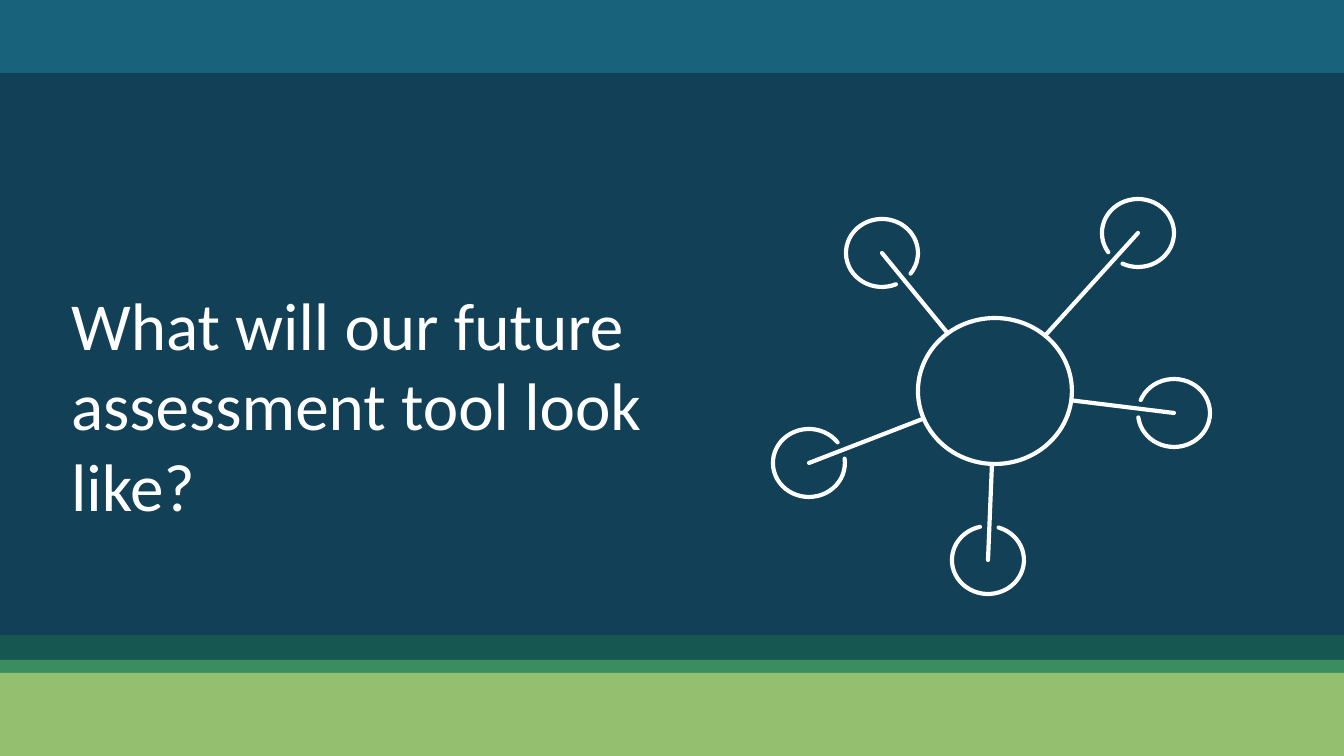
import math
from dataclasses import dataclass

import lxml.etree
import pptx
import pptx.dml.color
import pptx.dml.line
import pptx.enum.shapes
import pptx.enum.text
import pptx.oxml.ns
import pptx.slide
import pptx.util

SLIDE_WIDTH, SLIDE_HEIGHT = 1344, 756
EMU_PER_PX = pptx.util.Inches(10) / SLIDE_WIDTH

WHITE = pptx.dml.color.RGBColor(0xFF, 0xFF, 0xFF)
DARK_GREEN = pptx.dml.color.RGBColor(0x16, 0x57, 0x51)
TEAL = pptx.dml.color.RGBColor(0x18, 0x63, 0x7B)
NAVY = pptx.dml.color.RGBColor(0x12, 0x40, 0x57)
GREEN = pptx.dml.color.RGBColor(0x3B, 0x8D, 0x61)
LIGHT_GREEN = pptx.dml.color.RGBColor(0x94, 0xBF, 0x6E)

GAP_DEGREES = 30
ARC_STEPS = 48


@dataclass(frozen=True)
class Band:
    top: int
    bottom: int
    color: pptx.dml.color.RGBColor


@dataclass(frozen=True)
class Ellipse:
    x: int
    y: int
    radius_x: int
    radius_y: int

    def point(self, angle: float) -> tuple[float, float]:
        return (self.x + self.radius_x * math.cos(angle),
                self.y + self.radius_y * math.sin(angle))

    def angle_towards(self, other: "Ellipse") -> float:
        """Parametric angle at which the ray to the other centre leaves this ellipse."""
        return math.atan2((other.y - self.y) / self.radius_y,
                          (other.x - self.x) / self.radius_x)


BANDS = [
    Band(632, 667, DARK_GREEN),
    Band(0, 78, TEAL),
    Band(73, 635, NAVY),
    Band(660, 677, GREEN),
    Band(673, SLIDE_HEIGHT, LIGHT_GREEN),
]
HUB = Ellipse(995, 391, 77, 73)
NODES = [Ellipse(x, y, 36, 34) for x, y in
         [(1138, 233), (882, 253), (809, 463), (988, 560), (1174, 413)]]


def px(length: float) -> pptx.util.Emu:
    return pptx.util.Emu(round(length * EMU_PER_PX))


def style_outline(line: pptx.dml.line.LineFormat) -> None:
    line.color.rgb = WHITE
    line.width = pptx.util.Pt(2.25)


def round_caps(shape) -> None:
    shape.line._get_or_add_ln().set("cap", "rnd")


def draw_band(slide: pptx.slide.Slide, band: Band) -> None:
    shape = slide.shapes.add_shape(
        pptx.enum.shapes.MSO_SHAPE.RECTANGLE,
        0, px(band.top), px(SLIDE_WIDTH), px(band.bottom - band.top))
    shape.shadow.inherit = False
    shape.fill.solid()
    shape.fill.fore_color.rgb = band.color
    shape.line.fill.background()


def draw_hub(slide: pptx.slide.Slide, hub: Ellipse) -> None:
    shape = slide.shapes.add_shape(
        pptx.enum.shapes.MSO_SHAPE.OVAL,
        px(hub.x - hub.radius_x), px(hub.y - hub.radius_y),
        px(2 * hub.radius_x), px(2 * hub.radius_y))
    shape.shadow.inherit = False
    shape.fill.background()
    style_outline(shape.line)


def draw_node(slide: pptx.slide.Slide, node: Ellipse, hub: Ellipse) -> None:
    """Draw a ring left open where the spoke to the hub passes through it."""
    start = node.angle_towards(hub) + math.radians(GAP_DEGREES / 2)
    sweep = math.radians(360 - GAP_DEGREES)
    points = [tuple(map(px, node.point(start + sweep * step / ARC_STEPS)))
              for step in range(ARC_STEPS + 1)]
    builder = slide.shapes.build_freeform(*points[0])
    builder.add_line_segments(points[1:], close=False)
    ring = builder.convert_to_shape()
    ring.shadow.inherit = False
    ring.fill.background()
    style_outline(ring.line)
    round_caps(ring)


def draw_spoke(slide: pptx.slide.Slide, node: Ellipse, hub: Ellipse) -> None:
    end_x, end_y = hub.point(hub.angle_towards(node))
    spoke = slide.shapes.add_connector(
        pptx.enum.shapes.MSO_CONNECTOR.STRAIGHT,
        px(node.x), px(node.y), px(end_x), px(end_y))
    style_outline(spoke.line)
    round_caps(spoke)
    lxml.etree.SubElement(spoke._element.spPr, pptx.oxml.ns.qn("a:effectLst"))


def write_title(slide: pptx.slide.Slide, text: str) -> None:
    title = slide.shapes.title
    title.left, title.top, title.width, title.height = map(px, (58, 188, 681, 380))
    frame = title.text_frame
    frame.text = text
    frame.word_wrap = True
    frame.auto_size = pptx.enum.text.MSO_AUTO_SIZE.NONE
    frame.vertical_anchor = pptx.enum.text.MSO_ANCHOR.TOP
    frame.margin_left = frame.margin_right = frame.margin_bottom = px(13)
    frame.margin_top = px(95)
    paragraph = frame.paragraphs[0]
    paragraph.alignment = pptx.enum.text.PP_ALIGN.LEFT
    paragraph.font.name = "Calibri"
    paragraph.font.size = pptx.util.Pt(36)
    paragraph.font.color.rgb = WHITE
    # Bring the title in front of the bands.
    slide.shapes._spTree.append(title._element)


def main() -> None:
    presentation = pptx.Presentation()
    presentation.slide_width = px(SLIDE_WIDTH)
    presentation.slide_height = px(SLIDE_HEIGHT)
    slide = presentation.slides.add_slide(
        presentation.slide_layouts.get_by_name("Title Only"))
    for band in BANDS:
        draw_band(slide, band)
    write_title(slide, "What will our future assessment tool look like?")
    for node in NODES:
        draw_node(slide, node, HUB)
    draw_hub(slide, HUB)
    for node in NODES:
        draw_spoke(slide, node, HUB)
    presentation.save("out.pptx")


if __name__ == "__main__":
    main()
